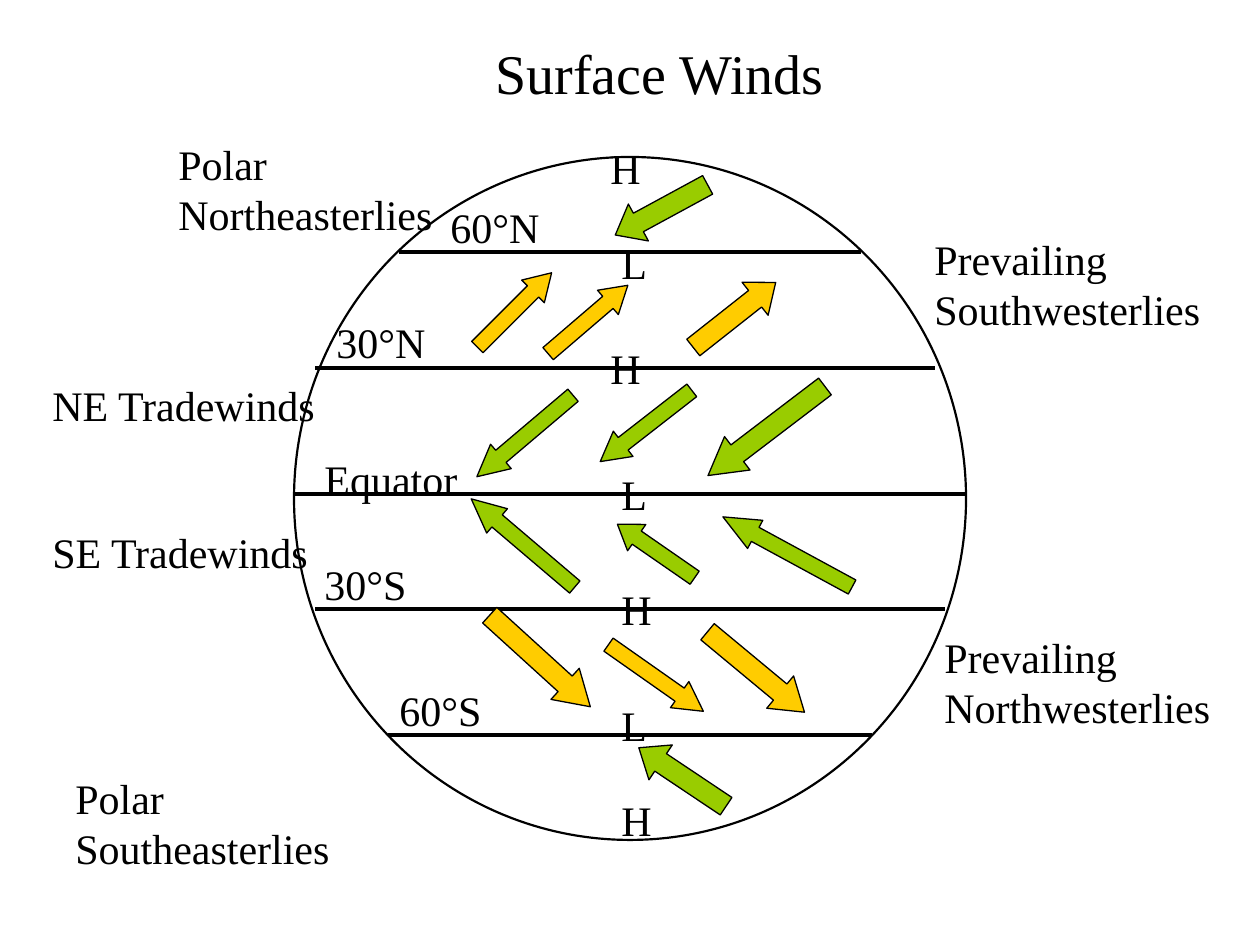
"""Build the Surface Winds slide: a globe with latitudes, pressure belts and wind arrows."""
from lxml.etree import SubElement
from pptx import Presentation
from pptx.dml.color import RGBColor
from pptx.enum.shapes import MSO_CONNECTOR, MSO_SHAPE
from pptx.enum.text import MSO_AUTO_SIZE
from pptx.oxml.ns import qn
from pptx.util import Emu, Pt

EMU_PER_PX = 914400 / 126
FONT = "Times New Roman"
COLORS = {"ink": "000000", "easterly": "99CC00", "westerly": "FFCC00"}

LATITUDES = [
    (294, 966, 494), (315, 935, 368), (399, 861, 252), (315, 945, 609), (388, 872, 735),
]
LATITUDE_NAMES = [
    ("Equator", 312, 447, 159), ("30°S", 312, 552, 107), ("60°S", 387, 678, 107),
    ("30°N", 324, 310, 115), ("60°N", 438, 195, 115),
]
PRESSURE_WIDTHS = {"L": 50, "H": 55}
PRESSURE_BELTS = [
    ("L", 609, 231), ("H", 598, 336), ("L", 609, 462), ("H", 598, 136),
    ("H", 609, 577), ("L", 609, 693), ("H", 609, 788),
]
WINDS = [
    (MSO_SHAPE.LEFT_ARROW, "easterly", [
        (693, 410, 147, 42, 322.7), (714, 536, 147, 32, 28.5), (462, 420, 126, 32, 319.7),
        (455, 527, 136, 32, 40.4), (609, 189, 105, 42, 331.5), (630, 756, 105, 42, 33.8),
    ]),
    (MSO_SHAPE.RIGHT_ARROW, "westerly", [
        (462, 294, 105, 32, 315), (682, 294, 105, 42, 321.7),
        (472, 640, 136, 42, 42.3), (693, 651, 126, 42, 39.7),
    ]),
    (MSO_SHAPE.DOWN_ARROW, "easterly", [(630, 368, 32, 116, 52.1), (640, 504, 32, 94, 124.7)]),
    (MSO_SHAPE.DOWN_ARROW, "westerly", [(640, 620, 32, 116, 305.1)]),
    (MSO_SHAPE.UP_ARROW, "westerly", [(572, 267, 32, 105, 49.4)]),
]
WIND_NAMES = [
    ("NE Tradewinds", 40, 373, 290), ("SE Tradewinds", 40, 520, 284),
    ("Prevailing\nSouthwesterlies", 922, 227, 291),
    ("Prevailing\nNorthwesterlies", 932, 625, 291),
    ("Polar Northeasterlies", 166, 132, 378), ("Polar Southeasterlies", 63, 766, 378),
]


def px(*lengths):
    """Turn pixel lengths into EMU."""
    return [Emu(round(length * EMU_PER_PX)) for length in lengths]


def color(name):
    """Look up a named colour."""
    return RGBColor.from_string(COLORS[name])


def outline(line, points):
    """Give a line the ink colour and a width."""
    line.color.rgb = color("ink")
    line.width = Pt(points)


def add_globe(slide):
    """Draw the unfilled globe."""
    globe = slide.shapes.add_shape(MSO_SHAPE.OVAL, *px(294, 157, 672, 683))
    globe.shadow.inherit = False
    globe.fill.background()
    outline(globe.line, 1.25)


def add_latitude(slide, left, right, y):
    """Draw one horizontal circle of latitude."""
    latitude = slide.shapes.add_connector(MSO_CONNECTOR.STRAIGHT, *px(left, y, right, y))
    outline(latitude.line, 2.25)
    SubElement(latitude._element.spPr, qn("a:effectLst"))


def add_wind(slide, direction, fill, left, top, width, height, rotation):
    """Draw a turned block arrow whose head takes a quarter of its length."""
    wind = slide.shapes.add_shape(direction, *px(left, top, width, height))
    wind.rotation = rotation
    wind.adjustments[0] = 0.5
    wind.adjustments[1] = max(width, height) / min(width, height) / 4
    wind.shadow.inherit = False
    wind.fill.solid()
    wind.fill.fore_color.rgb = color(fill)
    outline(wind.line, 0.75)


def add_label(slide, text, left, top, width, size=24):
    """Place unwrapped text, one paragraph per line."""
    lines = text.split("\n")
    height = 13 + round(size * 2.1) * len(lines)
    frame = slide.shapes.add_textbox(*px(left, top, width, height)).text_frame
    frame.word_wrap = False
    frame.auto_size = MSO_AUTO_SIZE.SHAPE_TO_FIT_TEXT
    frame.text = text
    for paragraph in frame.paragraphs:
        paragraph.font.name = FONT
        paragraph.font.size = Pt(size)
        paragraph.font.color.rgb = color("ink")


def main():
    """Build and save the slide."""
    deck = Presentation()
    deck.slide_width, deck.slide_height = px(1260, 945)
    slide = deck.slides.add_slide(deck.slide_layouts[6])
    add_globe(slide)
    for latitude in LATITUDES:
        add_latitude(slide, *latitude)
    for name in LATITUDE_NAMES:
        add_label(slide, *name)
    for letter, left, top in PRESSURE_BELTS:
        add_label(slide, letter, left, top, PRESSURE_WIDTHS[letter])
    for direction, fill, places in WINDS:
        for place in places:
            add_wind(slide, direction, fill, *place)
    for name in WIND_NAMES:
        add_label(slide, *name)
    add_label(slide, "Surface Winds", 483, 32, 357, size=32)
    deck.save("out.pptx")


if __name__ == "__main__":
    main()
